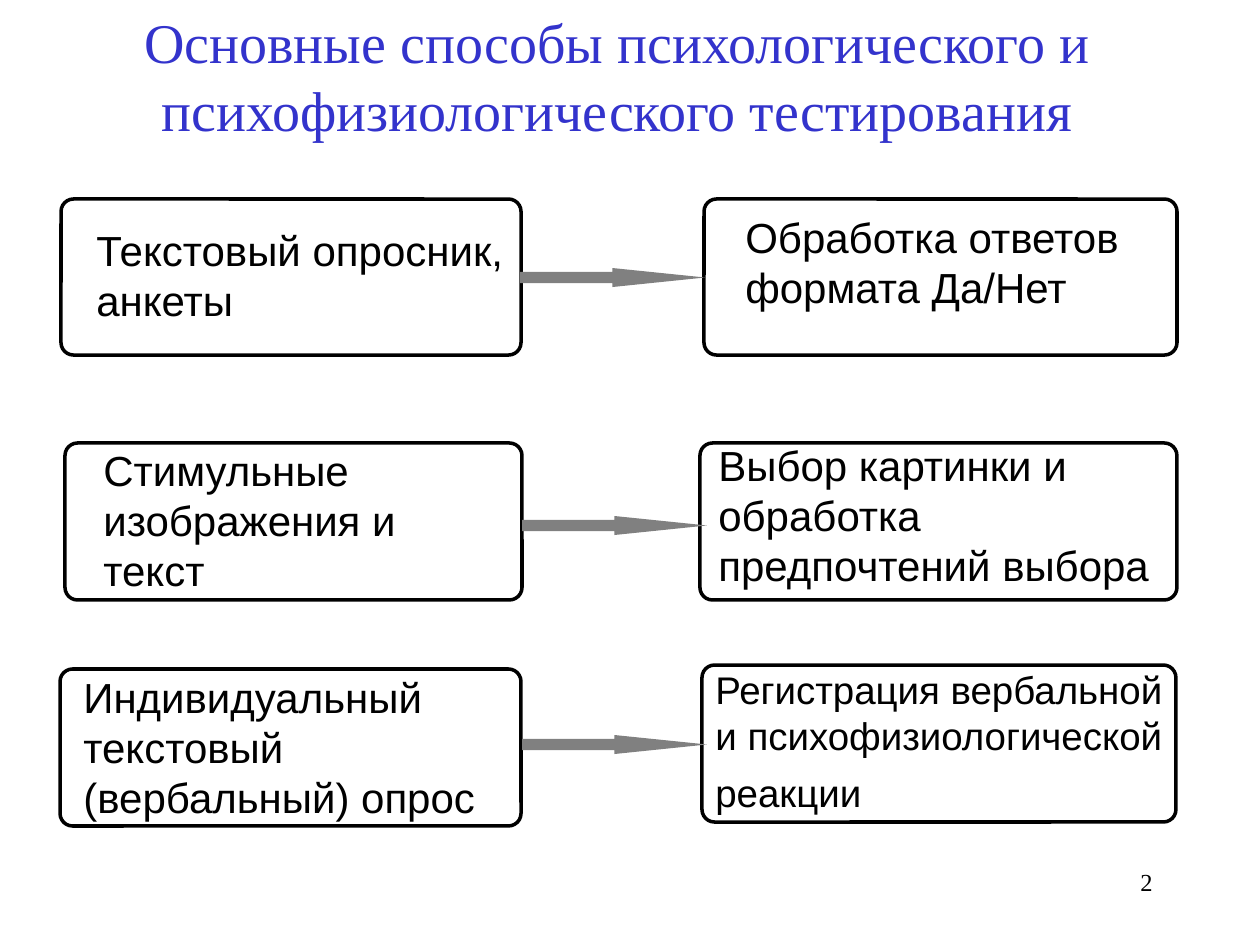
from dataclasses import dataclass

from pptx import Presentation
from pptx.dml.color import RGBColor
from pptx.enum.shapes import MSO_SHAPE
from pptx.enum.text import MSO_ANCHOR, MSO_AUTO_SIZE, PP_ALIGN
from pptx.slide import Slide
from pptx.util import Emu, Pt

EMU_PER_PX = 914400 / 126
COLORS = {"text": "000000", "title": "3333CC", "box": "FFFFFF", "arrow": "808080"}


@dataclass(frozen=True)
class Area:
    left: int
    top: int
    width: int
    height: int


@dataclass(frozen=True)
class Label:
    area: Area
    lines: tuple[str, ...]
    size: int = 24
    font: str = "Arial"
    color: str = "text"
    align: PP_ALIGN = PP_ALIGN.LEFT
    anchor: MSO_ANCHOR = MSO_ANCHOR.TOP
    trailing_space_size: int = 0


@dataclass(frozen=True)
class Step:
    source_box: Area
    source: Label
    arrow: Area
    result_box: Area
    result: Label


TITLE = Label(
    Area(6, 21, 1223, 108),
    ("Основные способы психологического и психофизиологического тестирования",),
    32, "Times New Roman", "title", PP_ALIGN.CENTER, MSO_ANCHOR.MIDDLE,
)
PAGE_NUMBER = Label(
    Area(903, 861, 262, 63), ("2",), 14, "Times New Roman", align=PP_ALIGN.RIGHT
)
STEPS = (
    Step(
        Area(61, 199, 460, 156),
        Label(Area(84, 218, 436, 115), ("Текстовый опросник,", "анкеты")),
        Area(520, 268, 185, 19),
        Area(704, 199, 473, 156),
        Label(Area(733, 205, 415, 115), ("Обработка ответов", "формата Да/Нет")),
    ),
    Step(
        Area(65, 443, 457, 157),
        Label(Area(91, 438, 399, 165), ("Стимульные", "изображения и текст")),
        Area(522, 516, 185, 19),
        Area(700, 443, 477, 157),
        Label(Area(706, 433, 470, 165),
              ("Выбор картинки и обработка", "предпочтений выбора")),
    ),
    Step(
        Area(60, 669, 461, 157),
        Label(Area(71, 665, 421, 165),
              ("Индивидуальный", "текстовый", "(вербальный) опрос")),
        Area(522, 735, 185, 19),
        Area(702, 665, 474, 157),
        Label(Area(703, 660, 475, 165),
              ("Регистрация вербальной", "и психофизиологической реакции"),
              22, trailing_space_size=28),
    ),
)


def px(value: int) -> Emu:
    return Emu(round(value * EMU_PER_PX))


def place(area: Area) -> tuple[Emu, ...]:
    return tuple(px(v) for v in (area.left, area.top, area.width, area.height))


def rgb(name: str) -> RGBColor:
    return RGBColor.from_string(COLORS[name])


def apply_format(target: object, values: dict[str, object]) -> None:
    for name, value in values.items():
        setattr(target, name, value)


def add_label(slide: Slide, label: Label) -> None:
    frame = slide.shapes.add_textbox(*place(label.area)).text_frame
    apply_format(frame, {
        "word_wrap": True,
        "auto_size": MSO_AUTO_SIZE.NONE,
        "vertical_anchor": label.anchor,
        "text": "\n".join(label.lines),
    })
    for paragraph in frame.paragraphs:
        paragraph.alignment = label.align
        for run in paragraph.runs:
            apply_format(run.font, {"name": label.font, "size": Pt(label.size)})
            run.font.color.rgb = rgb(label.color)
    if label.trailing_space_size:
        run = frame.paragraphs[-1].add_run()
        run.text = " "
        apply_format(run.font, {"name": label.font, "size": Pt(label.trailing_space_size)})


def add_box(slide: Slide, area: Area) -> None:
    shape = slide.shapes.add_shape(MSO_SHAPE.ROUNDED_RECTANGLE, *place(area))
    shape.adjustments[0] = 0.08
    shape.shadow.inherit = False
    shape.fill.solid()
    shape.fill.fore_color.rgb = rgb("box")
    shape.line.color.rgb = rgb("text")
    shape.line.width = Pt(2)


def add_arrow(slide: Slide, area: Area) -> None:
    shape = slide.shapes.add_shape(MSO_SHAPE.RIGHT_ARROW, *place(area))
    shape.adjustments[0] = 0.6
    shape.adjustments[1] = area.width / area.height / 2
    shape.shadow.inherit = False
    shape.fill.solid()
    shape.fill.fore_color.rgb = rgb("arrow")
    shape.line.fill.background()


def main() -> None:
    presentation = Presentation()
    apply_format(presentation, {"slide_width": px(1260), "slide_height": px(945)})
    slide = presentation.slides.add_slide(presentation.slide_layouts[6])
    add_label(slide, TITLE)
    for step in STEPS:
        add_box(slide, step.source_box)
        add_box(slide, step.result_box)
        add_label(slide, step.source)
        add_label(slide, step.result)
        add_arrow(slide, step.arrow)
    add_label(slide, PAGE_NUMBER)
    presentation.save("out.pptx")


if __name__ == "__main__":
    main()
